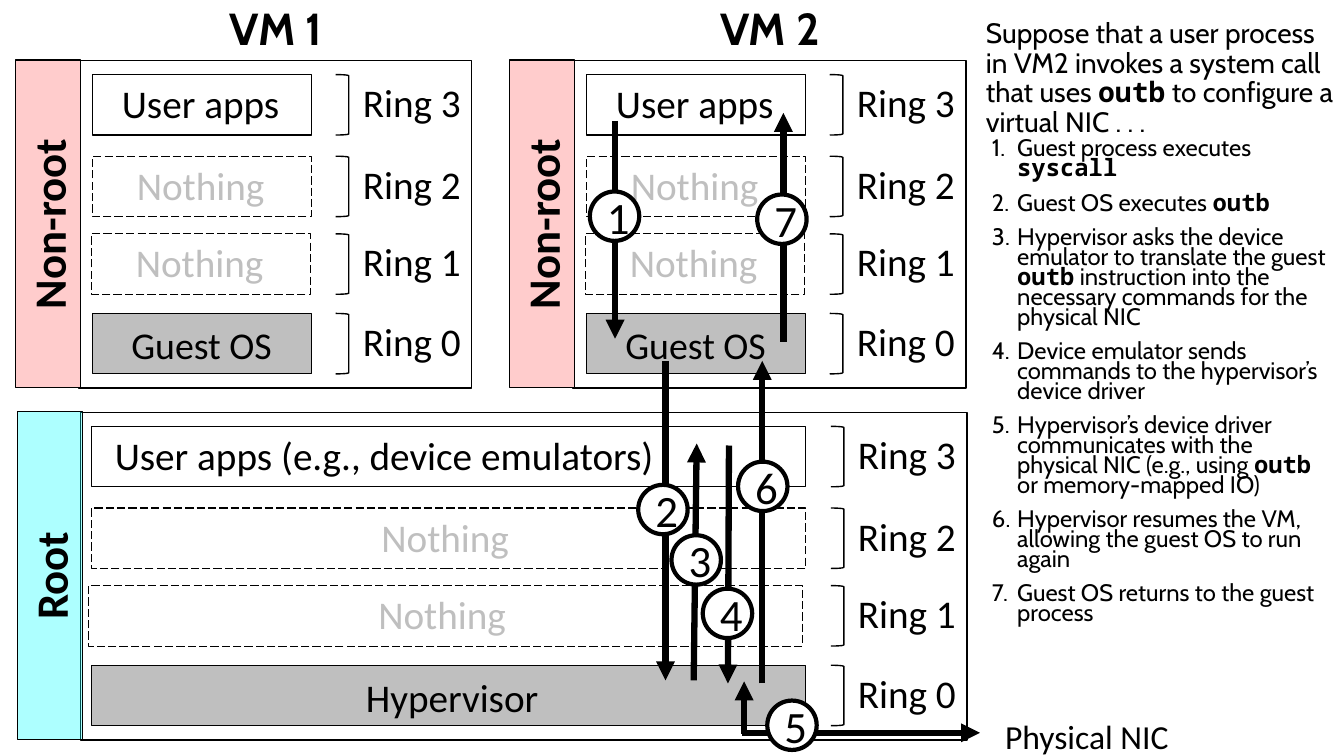
from lxml import etree
from pptx import Presentation
from pptx.dml.color import RGBColor
from pptx.enum.dml import MSO_LINE
from pptx.enum.shapes import MSO_CONNECTOR, MSO_SHAPE as SHAPE
from pptx.enum.text import MSO_ANCHOR as ANCHOR, PP_ALIGN as ALIGN
from pptx.oxml.ns import qn
from pptx.util import Pt

PX = 9144  # EMU per px, 100 px to the inch
COLORS = {"black": "000000", "white": "FFFFFF", "gray": "BFBFBF",
          "pink": "FFCCCC", "cyan": "00FFFF"}
SANS, HEAD, MONO = "Calibri", "Cabin", "Noto Sans Mono"

RING_TOPS = (14, 95, 172, 251)  # rings 3 to 0, from the panel's top
PANEL_H, RING_H, SIDE_W = 325, 60, 64

# Ring boxes: text, x shift of the box, label x and width within the panel
VM_RINGS = [("User apps", 0, 18, 206), ("Nothing", 0, 18, 206),
            ("Nothing", -1, 17, 206), ("Guest OS", 0, 42, 160)]
ROOT_RINGS = [("User apps (e.g., device emulators)", 0, 24, 675),
              ("Nothing", 0, 24, 675), ("Nothing", -3, 21, 675),
              ("Hypervisor", 0, 102, 533)]

# Steps: circle x and y, then arrows as x1, y1, x2, y2
STEPS = [
    (585, 190, [(610, 120, 610, 336)]),
    (633, 481, [(660, 358, 660, 675)]),
    (666, 531, [(688, 675, 691, 440)]),
    (697, 584, [(723, 442, 722, 678)]),
    (761, 695, [(736, 727, 972, 727), (738, 728, 738, 676)]),
    (732, 458, [(756, 678, 756, 358)]),
    (751, 193, [(777, 339, 777, 112)]),
]

# Text between backticks is set as code
INTRO = ("Suppose that a user process in VM2 invokes a system call "
         "that uses `outb` to configure a virtual NIC . . .")
STEP_TEXTS = [
    "Guest process executes `syscall`",
    "Guest OS executes `outb`",
    "Hypervisor asks the device emulator to translate the guest `outb` "
    "instruction into the necessary commands for the physical NIC",
    "Device emulator sends commands to the hypervisor’s device driver",
    "Hypervisor’s device driver communicates with the physical NIC "
    "(e.g., using `outb` or memory-mapped IO)",
    "Hypervisor resumes the VM, allowing the guest OS to run again",
    "Guest OS returns to the guest process",
]


def rgb(name):
    return RGBColor.from_string(COLORS[name])


def emu(*lengths):
    return [n * PX for n in lengths]


def style_run(r, size, font=SANS, color="black", bold=False):
    r.font.size, r.font.name, r.font.bold = Pt(size), font, bold
    r.font.color.rgb = rgb(color)


def set_text(sp, text, size, align=ALIGN.CENTER, **style):
    tf = sp.text_frame
    tf.word_wrap = True
    tf.text = text
    p = tf.paragraphs[0]
    p.alignment = align
    style_run(p.runs[0], size, **style)


def add_label(shapes, box, text, size, **style):
    set_text(shapes.add_textbox(*emu(*box)), text, size, **style)


def add_outline(shapes, kind, box, fill=None, width=0.75, dashed=False):
    sp = shapes.add_shape(kind, *emu(*box))
    sp.shadow.inherit = False
    if fill:
        sp.fill.solid()
        sp.fill.fore_color.rgb = rgb(fill)
    else:
        sp.fill.background()
    sp.line.color.rgb = rgb("black")
    sp.line.width = Pt(width)
    if dashed:
        sp.line.dash_style = MSO_LINE.LONG_DASH
    return sp


def add_arrow(shapes, ends):
    c = shapes.add_connector(MSO_CONNECTOR.STRAIGHT, *emu(*ends))
    c.line.color.rgb = rgb("black")
    c.line.width = Pt(4.5)
    props = c.element.spPr
    etree.SubElement(props.find(qn("a:ln")), qn("a:tailEnd"), type="triangle")
    etree.SubElement(props, qn("a:effectLst"))


def add_sidebar(shapes, left, top, text, fill, alpha=None):
    # Placed unrotated around the same centre, then turned upright
    shift = (PANEL_H - SIDE_W) // 2
    sp = add_outline(shapes, SHAPE.RECTANGLE,
                     (left - shift, top + shift, PANEL_H, SIDE_W), fill)
    sp.rotation = 270
    if alpha:
        clr = sp.element.spPr.find(".//" + qn("a:srgbClr"))
        etree.SubElement(clr, qn("a:alpha"), val=str(alpha * 1000))
    set_text(sp, text, 32, bold=True)


def add_ring(shapes, x, y, right, number, box_x, box_w, ring):
    text, shift, label_x, label_w = ring
    empty, kernel = text == "Nothing", number == 0
    add_outline(shapes, SHAPE.RECTANGLE, (x + box_x + shift, y, box_w, RING_H),
                "gray" if kernel else "white", dashed=empty)
    add_label(shapes, (x + label_x, y + 3 * kernel, label_w, 57), text,
              27 if text == "Guest OS" else 28,
              color="gray" if empty else "black",
              align=ALIGN.LEFT if "(" in text else ALIGN.CENTER)
    add_outline(shapes, SHAPE.RIGHT_BRACKET, (right - 135, y, 13, RING_H), width=1)
    add_label(shapes, (right - 118, y - 1, 132, 57), f"Ring {number}", 28,
              align=ALIGN.LEFT)


def add_panel(slide, x, y, w, box_x, box_w, rings, side, title=None):
    shapes = slide.shapes.add_group_shape().shapes
    add_outline(shapes, SHAPE.RECTANGLE, (x, y, w, PANEL_H), "white", 1)
    for i, (top, ring) in enumerate(zip(RING_TOPS, rings)):
        add_ring(shapes, x, y + top, x + w, 3 - i, box_x, box_w, ring)
    if title:
        add_label(shapes, (x + 130, -4, 132, 64), title, 32, font=HEAD, bold=True)
    add_sidebar(shapes, x - SIDE_W + 1, y, *side)


def add_step(slide, number, x, y, arrows):
    shapes = slide.shapes.add_group_shape().shapes
    for ends in arrows:
        add_arrow(shapes, ends)
    sp = add_outline(shapes, SHAPE.OVAL, (x, y, 49, 49), "white", 3)
    sp.text_frame.vertical_anchor = ANCHOR.MIDDLE
    set_text(sp, str(number), 32)


def fill_paragraph(p, text, size):
    for i, part in enumerate(text.split("`")):
        if part:
            r = p.add_run()
            r.text = part
            code = i % 2 == 1
            style_run(r, size, font=MONO if code else HEAD, bold=code)


def number_paragraph(p):
    props = p._p.get_or_add_pPr()
    props.set("marL", str(25 * PX))
    props.set("indent", str(-25 * PX))
    etree.SubElement(props, qn("a:buFont"), typeface="+mj-lt")
    etree.SubElement(props, qn("a:buAutoNum"), type="arabicPeriod")


def add_intro(slide):
    tf = slide.shapes.add_textbox(*emu(968, 15, 365, 128)).text_frame
    tf.word_wrap = True
    p = tf.paragraphs[0]
    p.line_spacing = Pt(21)
    fill_paragraph(p, INTRO, 20)


def add_step_list(slide):
    tf = slide.shapes.add_textbox(*emu(974, 135, 358, 540)).text_frame
    tf.word_wrap = True
    for i, text in enumerate(STEP_TEXTS):
        p = tf.add_paragraph() if i else tf.paragraphs[0]
        p.line_spacing = 0.7
        p.space_before = Pt(10)
        number_paragraph(p)
        fill_paragraph(p, text, 17)


def main():
    prs = Presentation()
    prs.slide_width, prs.slide_height = emu(1333, 750)
    slide = prs.slides.add_slide(prs.slide_layouts[6])

    # Virtual machines and the hypervisor's root mode
    for x, title in ((568, "VM 2"), (78, "VM 1")):
        add_panel(slide, x, 60, 390, 14, 217, VM_RINGS, ("Non-root", "pink"), title)
    add_panel(slide, 80, 409, 879, 11, 708, ROOT_RINGS, ("Root", "cyan", 32))

    # Explanation and the device label
    add_intro(slide)
    add_label(slide.shapes, (987, 705, 190, 50), "Physical NIC", 24, align=ALIGN.LEFT)

    # Numbered path of the system call
    for number, (x, y, arrows) in enumerate(STEPS, 1):
        add_step(slide, number, x, y, arrows)
    add_step_list(slide)

    prs.save("out.pptx")


if __name__ == "__main__":
    main()
